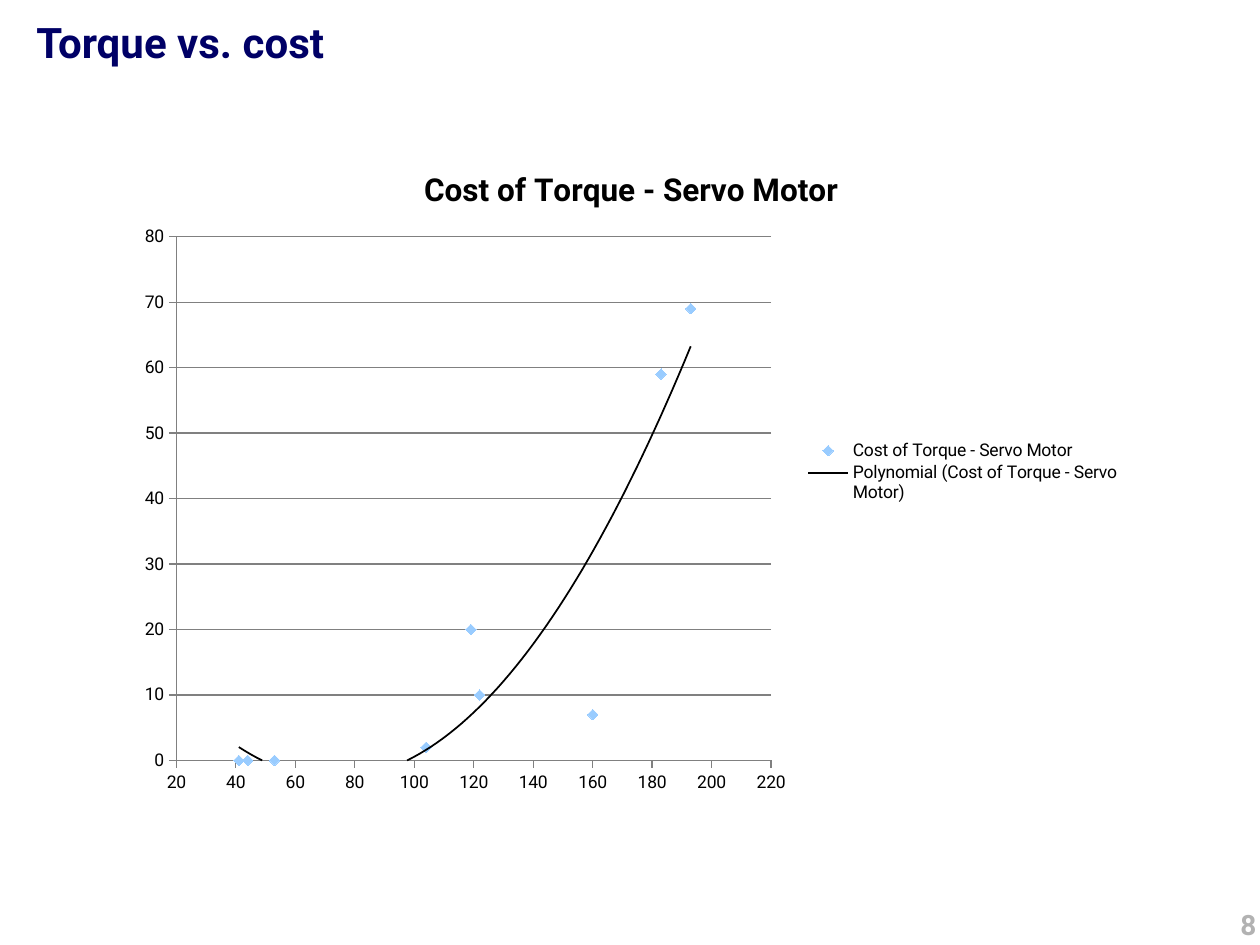
from dataclasses import dataclass

from lxml import etree
from pptx import Presentation
from pptx.chart.data import XyChartData
from pptx.dml.color import RGBColor
from pptx.enum.chart import XL_CHART_TYPE, XL_LEGEND_POSITION, XL_MARKER_STYLE, XL_TICK_MARK
from pptx.enum.text import MSO_ANCHOR, PP_ALIGN
from pptx.oxml import parse_xml
from pptx.oxml.ns import nsdecls, qn
from pptx.util import Inches, Pt

SCATTER = XL_CHART_TYPE.XY_SCATTER
LEGEND_RIGHT = XL_LEGEND_POSITION.RIGHT
DIAMOND = XL_MARKER_STYLE.DIAMOND
TICK_OUTSIDE = XL_TICK_MARK.OUTSIDE
TICK_NONE = XL_TICK_MARK.NONE
TOP = MSO_ANCHOR.TOP
LEFT, RIGHT = PP_ALIGN.LEFT, PP_ALIGN.RIGHT

NAVY = RGBColor(0x00, 0x00, 0x66)
SILVER = RGBColor(0xB2, 0xB2, 0xB2)
GREY = RGBColor(0x80, 0x80, 0x80)
BLACK = RGBColor(0x00, 0x00, 0x00)
SKY = RGBColor(0x99, 0xCC, 0xFF)
FONT = "Roboto"

CHART_TITLE = "Cost of Torque - Servo Motor"
POINTS = [(53, 0), (44, 0), (41, 0), (104, 2), (160, 7),
          (122, 10), (119, 20), (183, 59), (193, 69)]


@dataclass(frozen=True)
class Label:
    text: str
    left: float
    top: float
    width: float
    height: float
    size: int
    color: RGBColor
    align: PP_ALIGN


LABELS = [
    Label("Torque vs. cost", 0.19, 0.08, 9.71, 1, 24, NAVY, LEFT),
    Label("8", 6.9, 7.15, 3.17, 0.5, 16, SILVER, RIGHT),
]


def style_font(font, size: int, color: RGBColor, bold: bool) -> None:
    font.name = FONT
    font.size = Pt(size)
    font.bold = bold
    font.color.rgb = color


def add_label(page, label: Label) -> None:
    box = page.shapes.add_textbox(Inches(label.left), Inches(label.top),
                                  Inches(label.width), Inches(label.height))
    frame = box.text_frame
    frame.word_wrap = True
    frame.vertical_anchor = TOP
    para = frame.paragraphs[0]
    para.alignment = label.align
    span = para.add_run()
    span.text = label.text
    style_font(span.font, label.size, label.color, True)


def place(element, index: int, inner: bool = False, **fractions: float) -> None:
    """Give a chart part a manual layout, in fractions of the chart's size."""
    for old in element.findall(qn("c:layout")):
        element.remove(old)
    layout = parse_xml(f"<c:layout {nsdecls('c')}><c:manualLayout/></c:layout>")
    manual = layout[0]
    settings = {"layoutTarget": "inner"} if inner else {}
    settings |= {"xMode": "edge", "yMode": "edge"}
    settings |= {name: str(value) for name, value in fractions.items()}
    for name, value in settings.items():
        etree.SubElement(manual, qn(f"c:{name}")).set("val", value)
    element.insert(index, layout)


def style_axis(axis, low: int, high: int, step: int, grid: bool) -> None:
    axis.minimum_scale = low
    axis.maximum_scale = high
    axis.major_unit = step
    axis.major_tick_mark = TICK_OUTSIDE
    axis.minor_tick_mark = TICK_NONE
    axis.has_major_gridlines = grid
    axis.format.line.color.rgb = GREY
    axis.format.line.width = Pt(0.75)
    if grid:
        axis.major_gridlines.format.line.color.rgb = GREY
        axis.major_gridlines.format.line.width = Pt(0.75)
    style_font(axis.tick_labels.font, 10, BLACK, False)
    axis.tick_labels.number_format = "General"
    axis.tick_labels.number_format_is_linked = False


def add_trend_line(series) -> None:
    """Fit a second-order polynomial to the series."""
    trend = parse_xml(
        f"<c:trendline {nsdecls('c', 'a')}>"
        f'<c:spPr><a:ln w="{Pt(1)}"><a:solidFill><a:srgbClr val="{BLACK}"/>'
        "</a:solidFill></a:ln></c:spPr>"
        '<c:trendlineType val="poly"/><c:order val="2"/>'
        '<c:dispRSqr val="0"/><c:dispEq val="0"/></c:trendline>')
    series._element.find(qn("c:xVal")).addprevious(trend)


def add_torque_chart(page) -> None:
    data = XyChartData()
    torque = data.add_series(CHART_TITLE)
    for x, y in POINTS:
        torque.add_data_point(x, y)
    chart = page.shapes.add_chart(SCATTER, Inches(1), Inches(1.08),
                                  Inches(8), Inches(5.33), data).chart
    style_font(chart.font, 10, BLACK, False)

    chart.has_title = True
    span = chart.chart_title.text_frame.paragraphs[0].add_run()
    span.text = CHART_TITLE
    style_font(span.font, 18, BLACK, True)
    place(chart.chart_title._element, 1, x=0.29, y=0.04)

    style_axis(chart.category_axis, 20, 220, 20, grid=False)
    style_axis(chart.value_axis, 0, 80, 10, grid=True)
    plot = chart.plots[0]
    plot.vary_by_categories = False
    place(plot._element.getparent(), 0, inner=True, x=0.05, y=0.15, w=0.59, h=0.78)

    chart.has_legend = True
    chart.legend.position = LEGEND_RIGHT
    chart.legend.include_in_layout = False
    style_font(chart.legend.font, 10, BLACK, False)
    place(chart.legend._element, 1, x=0.67, y=0.45, w=0.32, h=0.1)

    series = plot.series[0]
    series.format.line.fill.background()
    series.marker.style = DIAMOND
    series.marker.size = 6
    series.marker.format.fill.solid()
    series.marker.format.fill.fore_color.rgb = SKY
    series.marker.format.line.color.rgb = SKY
    add_trend_line(series)


def main() -> None:
    deck = Presentation()
    deck.slide_width = Inches(10)
    deck.slide_height = Inches(7.5)
    page = deck.slides.add_slide(deck.slide_layouts[6])
    for label in LABELS:
        add_label(page, label)
    add_torque_chart(page)
    deck.save("out.pptx")


if __name__ == "__main__":
    main()
